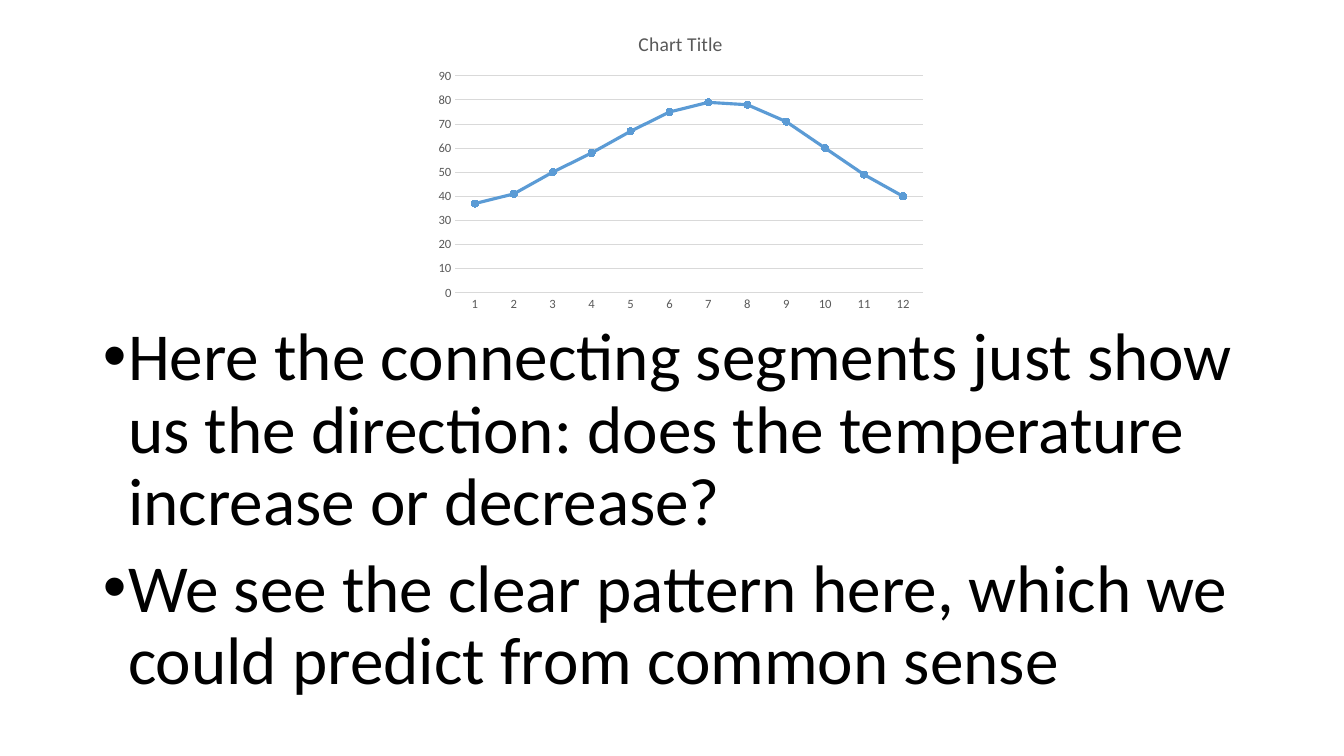
from pptx import Presentation
from pptx.chart.data import CategoryChartData
from pptx.dml.color import RGBColor
from pptx.enum import chart as kinds, text
from pptx.oxml import parse_xml
from pptx.oxml.ns import nsdecls
from pptx.util import Inches, Pt

FONT = "Calibri"
GREY, PALE, BLUE = "595959", "D9D9D9", "5B9BD5"
TEMPS = [37, 41, 50, 58, 67, 75, 79, 78, 71, 60, 49, 40]
POINTS = [
    "Here the connecting segments just show us the direction: "
    "does the temperature increase or decrease?",
    "We see the clear pattern here, which we could predict from common sense",
]


def paint(color, code):
    color.rgb = RGBColor.from_string(code)


def style(font, size, code):
    for name, value in {"name": FONT, "size": Pt(size), "bold": False}.items():
        setattr(font, name, value)
    paint(font.color, code)


def stroke(line, code, width):
    paint(line.color, code)
    line.width = Pt(width)


def place(shape, *box):
    for name, value in zip(("left", "top", "width", "height"), box):
        setattr(shape, name, Inches(value))


def add_list(body, lines):
    place(body, 0.92, 3.15, 11.5, 4.35)
    frame = body.text_frame
    form = {"word_wrap": True, "auto_size": text.MSO_AUTO_SIZE.NONE,
            "vertical_anchor": text.MSO_ANCHOR.TOP}
    for name, value in form.items():
        setattr(frame, name, value)
    frame.text = "\n".join(lines)
    for para in frame.paragraphs:
        para.line_spacing = 0.9
        para.space_before = Pt(10)
        style(para.runs[0].font, 48, "000000")
        # Hanging bullet
        props = para._p.get_or_add_pPr()
        props.set("marL", str(Inches(0.25)))
        props.set("indent", str(-Inches(0.25)))
        props.append(parse_xml(f'<a:buFont {nsdecls("a")} typeface="Arial"/>'))
        props.append(parse_xml(f'<a:buChar {nsdecls("a")} char="•"/>'))


def add_line(slide, temps):
    data = CategoryChartData()
    data.categories = [str(month) for month in range(1, len(temps) + 1)]
    data.add_series("Series 1", temps)
    box = [Inches(n) for n in (4.25, 0.15, 5, 3)]
    chart = slide.shapes.add_chart(
        kinds.XL_CHART_TYPE.LINE_MARKERS, *box, data).chart
    style(chart.font, 10, "000000")
    chart.has_legend = False

    # Title
    chart.has_title = True
    frame = chart.chart_title.text_frame
    frame.text = "Chart Title"
    style(frame.paragraphs[0].runs[0].font, 14, GREY)
    chart.chart_title.include_in_layout = False

    # Axes
    for axis in (chart.category_axis, chart.value_axis):
        axis.major_tick_mark = axis.minor_tick_mark = kinds.XL_TICK_MARK.NONE
        style(axis.tick_labels.font, 9, GREY)
    stroke(chart.category_axis.format.line, PALE, 0.75)
    scale = chart.value_axis
    scale.minimum_scale, scale.maximum_scale, scale.major_unit = 0, 90, 10
    scale.format.line.fill.background()
    scale.has_major_gridlines = True
    stroke(scale.major_gridlines.format.line, PALE, 0.75)

    # Series
    plot = chart.plots[0]
    plot.vary_by_categories = False
    series = plot.series[0]
    series.smooth = False
    stroke(series.format.line, BLUE, 2.25)
    mark = series.marker
    mark.style, mark.size = kinds.XL_MARKER_STYLE.CIRCLE, 5
    mark.format.fill.solid()
    paint(mark.format.fill.fore_color, BLUE)
    stroke(mark.format.line, BLUE, 0.75)


def main():
    deck = Presentation()
    deck.slide_width, deck.slide_height = Inches(13.33), Inches(7.5)
    slide = deck.slides.add_slide(deck.slide_layouts[1])
    # The slide has body text but no title
    title = slide.shapes.title.element
    title.getparent().remove(title)
    add_list(slide.placeholders[1], POINTS)
    add_line(slide, TEMPS)
    deck.save("out.pptx")


if __name__ == "__main__":
    main()
